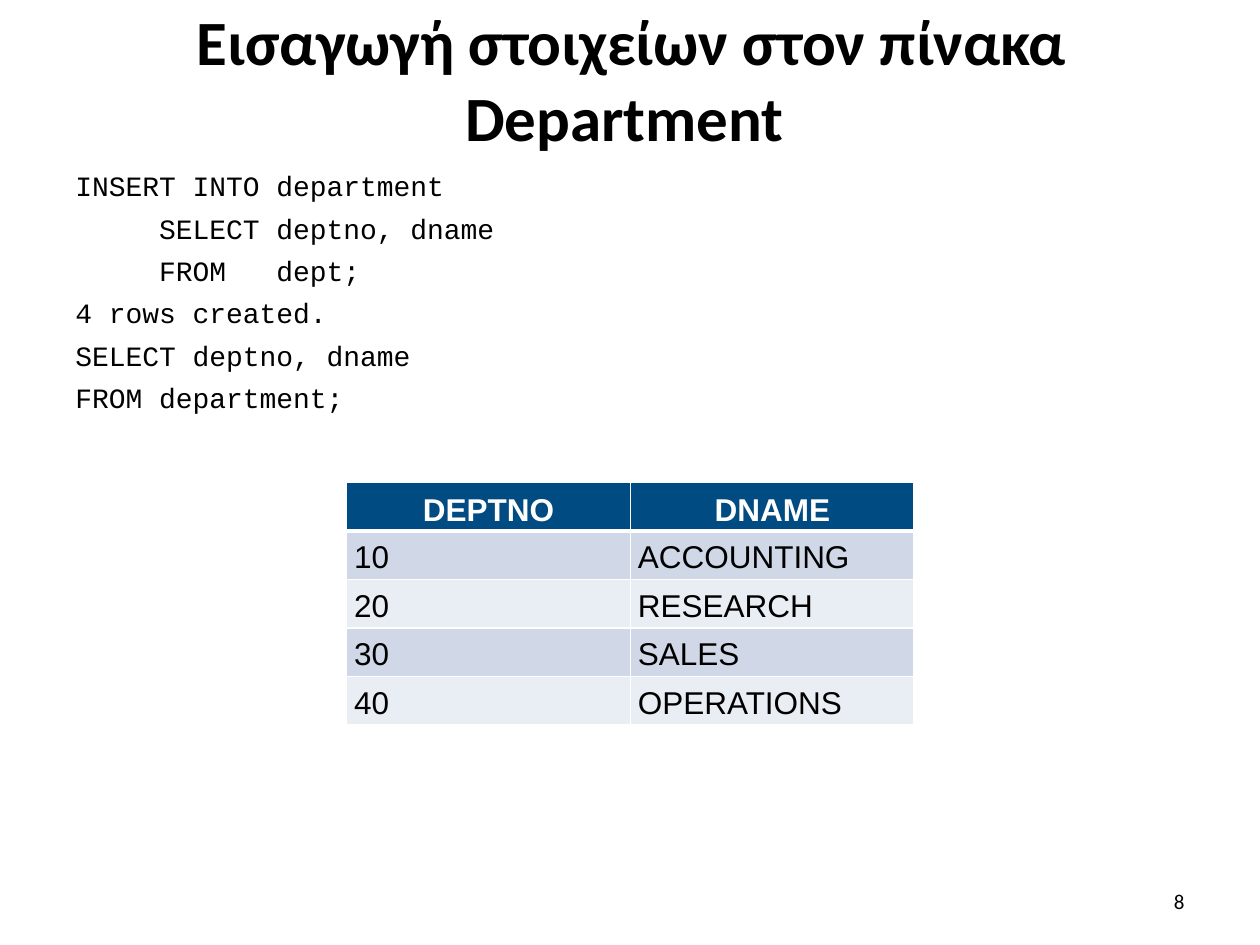
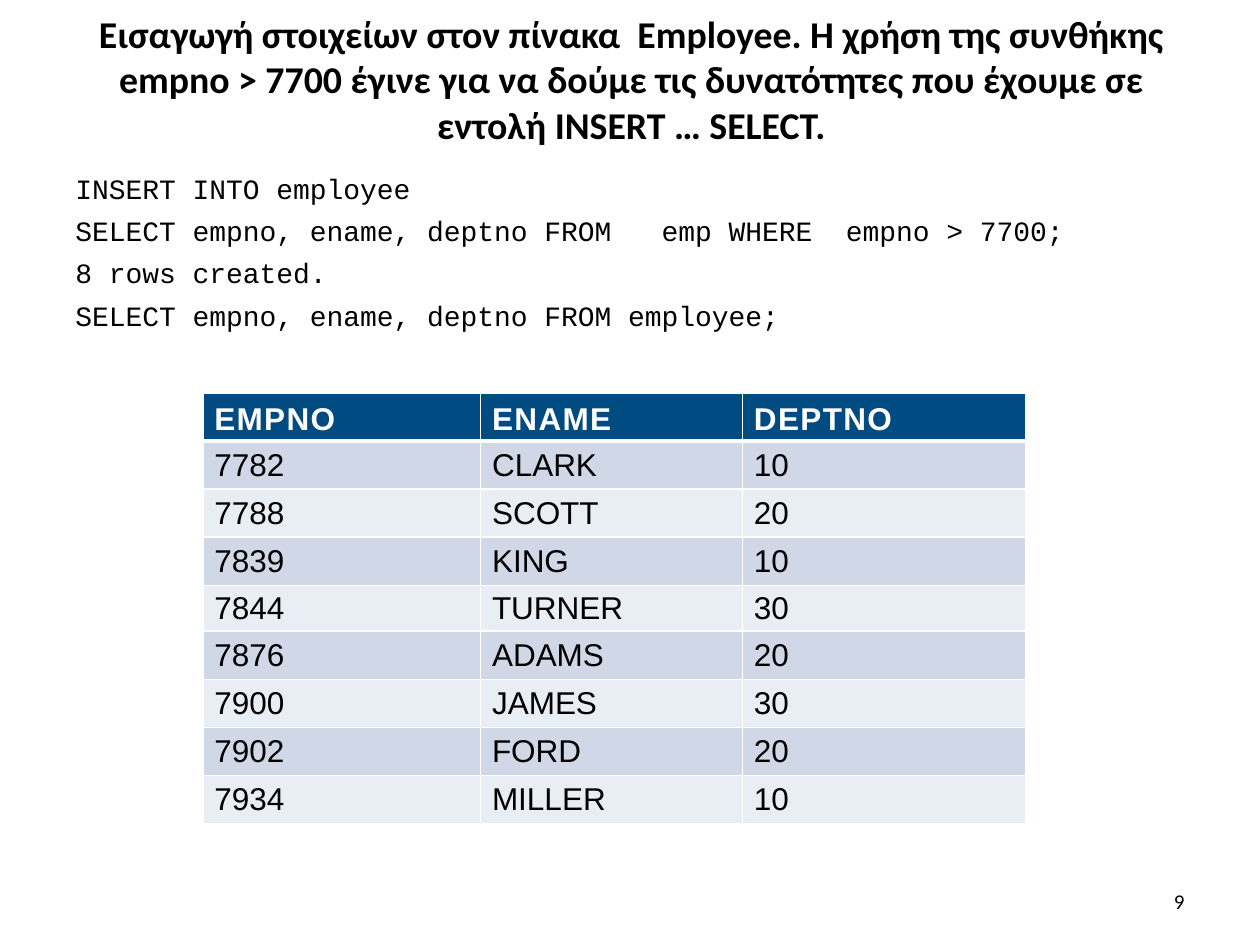
from lxml.etree import SubElement
from pptx import Presentation
from pptx.dml.color import RGBColor
from pptx.enum.text import MSO_ANCHOR as Anchor, PP_ALIGN as Align
from pptx.oxml.ns import qn
from pptx.util import Cm, Pt

BLACK = RGBColor(0x00, 0x00, 0x00)
WHITE = RGBColor(0xFF, 0xFF, 0xFF)
HEADER_BLUE = RGBColor(0x00, 0x4B, 0x82)
BAND_COLORS = (RGBColor(0xD0, 0xD8, 0xE8), RGBColor(0xE9, 0xED, 0xF4))

TITLE_FONT, CODE_FONT, TABLE_FONT = "Calibri", "Courier New", "Arial"
CODE_INDENT = Cm(1.69)

# Each code line is (indent level, text).
SLIDES = [
    {
        "number": 8,
        "title": "Εισαγωγή στοιχείων στον πίνακα Department ",
        "title_size": 36,
        "code": [
            (0, "INSERT INTO department"),
            (1, "SELECT deptno, dname"),
            (1, "FROM   dept;"),
            (0, "4 rows created."),
            (0, "SELECT deptno, dname"),
            (0, "FROM department;"),
        ],
        "first_line_spacing": 0.93,
        "table": {
            "rows": [
                ("DEPTNO", "DNAME"),
                ("10", "ACCOUNTING"),
                ("20", "RESEARCH"),
                ("30", "SALES"),
                ("40", "OPERATIONS"),
            ],
            "left": 6.99, "top": 9.73,
            "widths": [5.72, 5.72],
            "heights": [0.92] * 5,
            "margins": (0.15, 0.05),
            "line_spacing": 1.15,
            "header_align": Align.CENTER,
            "header_tracking": 0,
        },
    },
    {
        "number": 9,
        "title": "Εισαγωγή στοιχείων στον πίνακα  Employee. Η χρήση της συνθήκης "
                 "empno > 7700 έγινε για να δούμε τις δυνατότητες που έχουμε σε "
                 "εντολή INSERT … SELECT.",
        "title_size": 21.6,
        "code": [
            (0, "INSERT INTO employee"),
            (0, "SELECT empno, ename, deptno FROM   emp WHERE  empno > 7700;"),
            (0, "8 rows created."),
            (0, "SELECT empno, ename, deptno FROM employee;"),
        ],
        "first_line_spacing": 1.0,
        "table": {
            "rows": [
                ("EMPNO", "ENAME", "DEPTNO"),
                ("7782", "CLARK", "10"),
                ("7788", "SCOTT", "20"),
                ("7839", "KING", "10"),
                ("7844", "TURNER", "30"),
                ("7876", "ADAMS", "20"),
                ("7900", "JAMES", "30"),
                ("7902", "FORD", "20"),
                ("7934", "MILLER", "10"),
            ],
            "left": 4.09, "top": 7.92,
            "widths": [5.6, 5.28, 5.7],
            "heights": [0.97] * 4 + [0.87] + [0.97] * 4,
            "margins": (0.23, 0.08),
            "line_spacing": 1.0,
            "header_align": Align.LEFT,
            "header_tracking": 80,
        },
    },
]


def set_font(paragraph, name, size, color=BLACK, bold=False):
    font = paragraph.font
    font.name, font.size, font.bold = name, Pt(size), bold
    font.color.rgb = color


def add_text_box(slide, left, top, width, height, anchor):
    box = slide.shapes.add_textbox(Cm(left), Cm(top), Cm(width), Cm(height))
    frame = box.text_frame
    frame.word_wrap = True
    frame.vertical_anchor = anchor
    return frame


def add_line(slide, text, place, size, align, bold=False):
    """Add a one-paragraph text box, used for the title and the slide number."""
    paragraph = add_text_box(slide, *place, Anchor.MIDDLE).paragraphs[0]
    paragraph.text = text
    paragraph.alignment = align
    set_font(paragraph, TITLE_FONT, size, bold=bold)


def add_code(slide, lines, first_line_spacing):
    frame = add_text_box(slide, 1.27, 3.33, 22.86, 14, Anchor.TOP)
    for index, (level, text) in enumerate(lines):
        paragraph = frame.add_paragraph() if index else frame.paragraphs[0]
        paragraph.text = text
        paragraph.line_spacing = 1.0 if index else first_line_spacing
        paragraph.space_before = Pt(5)
        paragraph._p.get_or_add_pPr().set("marL", str(level * CODE_INDENT))
        set_font(paragraph, CODE_FONT, 16)


def set_borders(cell, top, bottom):
    """Draw white cell borders; top and bottom are widths in points."""
    properties = cell._tc.get_or_add_tcPr()
    for side, width in (("L", 1), ("R", 1), ("T", top), ("B", bottom)):
        line = SubElement(properties, qn(f"a:ln{side}"), w=str(Pt(width)))
        fill = SubElement(line, qn("a:solidFill"))
        SubElement(fill, qn("a:srgbClr"), val=str(WHITE))


def style_cell(cell, row_index, layout):
    is_header = row_index == 0
    set_borders(cell, top=3 if row_index == 1 else 1, bottom=3 if is_header else 1)
    cell.fill.solid()
    cell.fill.fore_color.rgb = HEADER_BLUE if is_header else BAND_COLORS[(row_index - 1) % 2]
    cell.vertical_anchor = Anchor.BOTTOM if is_header else Anchor.MIDDLE
    side, edge = layout["margins"]
    cell.margin_left = cell.margin_right = Cm(side)
    cell.margin_top = cell.margin_bottom = Cm(edge)

    paragraph = cell.text_frame.paragraphs[0]
    paragraph.line_spacing = layout["line_spacing"]
    paragraph.alignment = layout["header_align"] if is_header else Align.LEFT
    set_font(paragraph, TABLE_FONT, 18, WHITE if is_header else BLACK, is_header)
    if is_header and layout["header_tracking"]:
        for run in paragraph.runs:
            run._r.get_or_add_rPr().set("spc", str(layout["header_tracking"]))


def add_result_table(slide, layout):
    rows, widths, heights = layout["rows"], layout["widths"], layout["heights"]
    table = slide.shapes.add_table(
        len(rows), len(widths), Cm(layout["left"]), Cm(layout["top"]),
        Cm(sum(widths)), Cm(sum(heights))).table
    for column, width in zip(table.columns, widths):
        column.width = Cm(width)
    for row_index, (row, values) in enumerate(zip(table.rows, rows)):
        row.height = Cm(heights[row_index])
        for cell, value in zip(row.cells, values):
            cell.text = value
            style_cell(cell, row_index, layout)


def main():
    presentation = Presentation()
    presentation.slide_width, presentation.slide_height = Cm(25.4), Cm(19.05)
    blank = presentation.slide_layouts[6]
    for content in SLIDES:
        slide = presentation.slides.add_slide(blank)
        add_line(slide, content["title"], (1.3, 0.33, 22.86, 2.51),
                 content["title_size"], Align.CENTER, bold=True)
        add_code(slide, content["code"], content["first_line_spacing"])
        add_result_table(slide, content["table"])
        add_line(slide, str(content["number"]), (18.21, 17.65, 5.92, 1.02),
                 12, Align.RIGHT)
    presentation.save("out.pptx")


if __name__ == "__main__":
    main()
